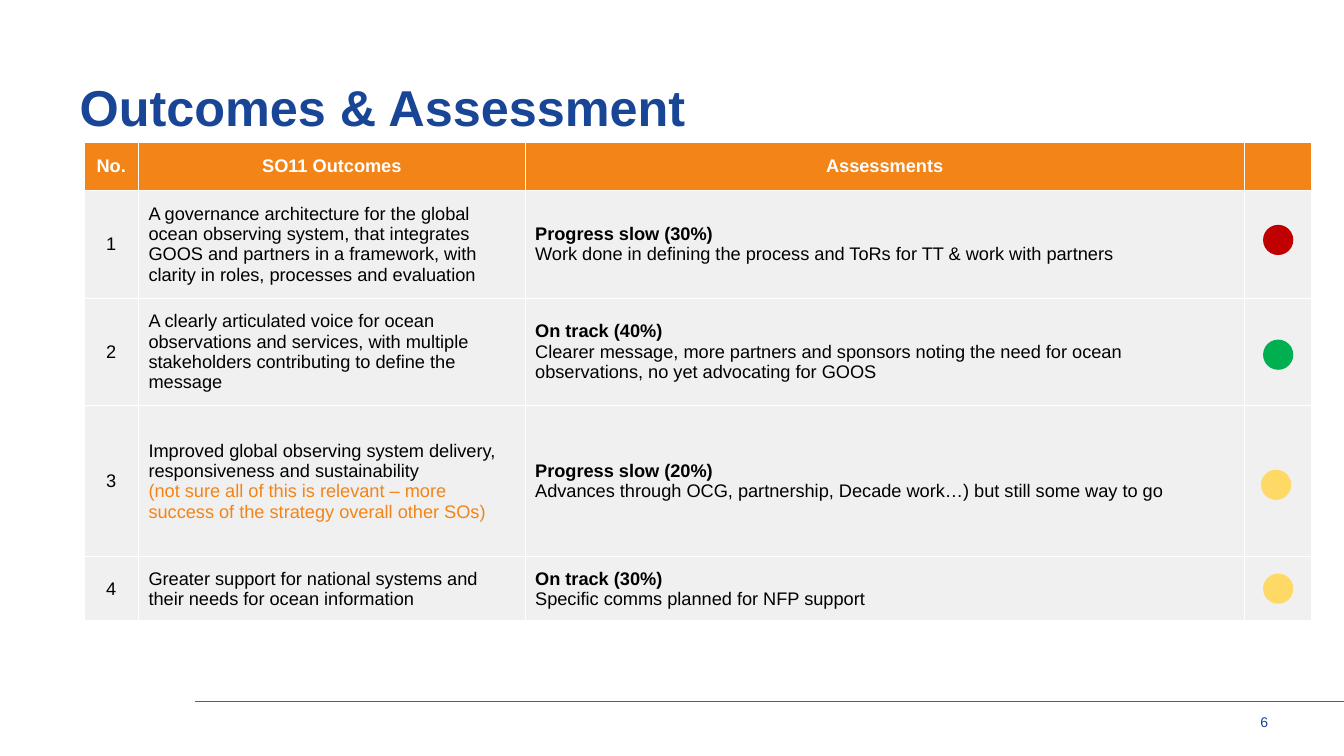
from typing import NamedTuple

from lxml import etree
from pptx import Presentation
from pptx.dml.color import RGBColor
from pptx.enum.shapes import MSO_CONNECTOR, MSO_SHAPE
from pptx.enum.text import MSO_ANCHOR, PP_ALIGN
from pptx.oxml.ns import qn
from pptx.util import Pt

CENTER, LEFT, RIGHT = PP_ALIGN.CENTER, PP_ALIGN.LEFT, PP_ALIGN.RIGHT
MIDDLE, TOP = MSO_ANCHOR.MIDDLE, MSO_ANCHOR.TOP
OVAL, STRAIGHT = MSO_SHAPE.OVAL, MSO_CONNECTOR.STRAIGHT

WHITE = RGBColor(0xFF, 0xFF, 0xFF)
BLACK = RGBColor(0, 0, 0)
BLUE = RGBColor(0x18, 0x45, 0x96)
ORANGE = RGBColor(0xF3, 0x84, 0x17)
PALE = RGBColor(0xF0, 0xF0, 0xF0)
GREY = RGBColor(0x5C, 0x5C, 0x5C)
RED = RGBColor(0xC0, 0, 0)
GREEN = RGBColor(0, 0xB0, 0x50)
YELLOW = RGBColor(0xFF, 0xD9, 0x66)

FONT = "Arial"
TABLE_LEFT, TABLE_TOP = 60, 101.5
COL_WIDTHS = (38.9, 276.2, 513.5, 48.2)
HEADER_HEIGHT = 34.5
DOT_SIZE = 21.6
HEADINGS = ("No.", "SO11 Outcomes", "Assessments", "")


class Outcome(NamedTuple):
    text: str
    status: str
    detail: str
    height: float
    dot_color: RGBColor
    dot_left: float
    dot_top: float
    remark: str = ""


class Line(NamedTuple):
    text: str
    color: RGBColor = BLACK
    bold: bool = False


OUTCOMES = (
    Outcome("A governance architecture for the global ocean observing system, that "
            "integrates GOOS and partners in a framework, with clarity in roles, "
            "processes and evaluation",
            "Progress slow (30%)",
            "Work done in defining the process and ToRs for TT & work with partners",
            76.7, RED, 902.2, 160.6),
    Outcome("A clearly articulated voice for ocean observations and services, with "
            "multiple stakeholders contributing to define the message",
            "On track (40%)",
            "Clearer message, more partners and sponsors noting the need for ocean "
            "observations, no yet advocating for GOOS",
            76.7, GREEN, 902.2, 242.6),
    Outcome("Improved global observing system delivery, responsiveness and sustainability",
            "Progress slow (20%)",
            "Advances through OCG, partnership, Decade work…) but still some way to go",
            108, YELLOW, 900.7, 335.5,
            "(not sure all of this is relevant – more success of the strategy overall "
            "other SOs)"),
    Outcome("Greater support for national systems and their needs for ocean information",
            "On track (30%)", "Specific comms planned for NFP support",
            42.5, YELLOW, 902.2, 409.7),
)


def add_text(s, text: str, box: tuple, size: float, align, spacing: float,
             bold: bool = False, anchor=TOP) -> None:
    tf = s.shapes.add_textbox(*map(Pt, box)).text_frame
    tf.word_wrap = True
    tf.margin_left = tf.margin_right = tf.margin_top = tf.margin_bottom = 0
    tf.vertical_anchor = anchor
    tf.text = text
    p = tf.paragraphs[0]
    p.alignment, p.line_spacing = align, spacing
    font = p.runs[0].font
    font.name, font.size, font.bold = FONT, Pt(size), bold
    font.color.rgb = BLUE


def set_borders(cell) -> None:
    """Give the cell thin white edges, placed ahead of its fill."""
    tc_pr = cell._tc.get_or_add_tcPr()
    for i, edge in enumerate(("a:lnL", "a:lnR", "a:lnT", "a:lnB")):
        ln = etree.Element(qn(edge), w=str(Pt(0.75)))
        fill = etree.SubElement(ln, qn("a:solidFill"))
        etree.SubElement(fill, qn("a:srgbClr"), val=str(WHITE))
        tc_pr.insert(i, ln)


def fill_cell(cell, lines: list[Line], fill: RGBColor, align) -> None:
    cell.fill.solid()
    cell.fill.fore_color.rgb = fill
    set_borders(cell)
    cell.vertical_anchor = MIDDLE
    cell.margin_left = cell.margin_right = Pt(7.2)
    cell.margin_top = cell.margin_bottom = Pt(7.2)
    tf = cell.text_frame
    tf.text = "\n".join(line.text for line in lines)
    for p, line in zip(tf.paragraphs, lines):
        p.alignment = align
        p.font.size = Pt(13)
        for r in p.runs:
            r.font.name, r.font.size, r.font.bold = FONT, Pt(13), line.bold
            r.font.color.rgb = line.color


def add_outcome_table(s) -> None:
    heights = (HEADER_HEIGHT, *(o.height for o in OUTCOMES))
    table = s.shapes.add_table(
        len(heights), len(COL_WIDTHS), Pt(TABLE_LEFT), Pt(TABLE_TOP),
        Pt(sum(COL_WIDTHS)), Pt(sum(heights))).table
    for col, width in zip(table.columns, COL_WIDTHS):
        col.width = Pt(width)
    for row, height in zip(table.rows, heights):
        row.height = Pt(height)
    for c, heading in enumerate(HEADINGS):
        fill_cell(table.cell(0, c), [Line(heading, WHITE, True)], ORANGE, CENTER)
    for n, o in enumerate(OUTCOMES, start=1):
        outcome = [Line(o.text)]
        if o.remark:
            outcome.append(Line(o.remark, ORANGE))
        contents = ([Line(str(n))], outcome,
                    [Line(o.status, bold=True), Line(o.detail)], [Line("")])
        for c, lines in enumerate(contents):
            fill_cell(table.cell(n, c), lines, PALE, LEFT if c else CENTER)


def add_status_dot(s, o: Outcome) -> None:
    sp = s.shapes.add_shape(OVAL, Pt(o.dot_left), Pt(o.dot_top),
                            Pt(DOT_SIZE), Pt(DOT_SIZE))
    sp.shadow.inherit = False
    sp.fill.solid()
    sp.fill.fore_color.rgb = o.dot_color
    sp.line.fill.background()


def add_footer_rule(s) -> None:
    rule = s.shapes.add_connector(STRAIGHT, Pt(139), Pt(501), Pt(960), Pt(501))
    rule.line.color.rgb = GREY
    rule.line.width = Pt(0.75)
    etree.SubElement(rule._element.spPr, qn("a:effectLst"))


def main() -> None:
    prs = Presentation()
    prs.slide_width, prs.slide_height = Pt(960), Pt(540)
    s = prs.slides.add_slide(prs.slide_layouts[6])
    add_footer_rule(s)
    add_text(s, "Outcomes & Assessment", (56.9, 56.9, 846.7, 45.4), 36, LEFT, 0.85,
             bold=True, anchor=MIDDLE)
    add_text(s, "6", (885.6, 511.2, 20.2, 15.1), 10, RIGHT, 0.9)
    add_outcome_table(s)
    for o in OUTCOMES:
        add_status_dot(s, o)
    prs.save("out.pptx")


if __name__ == "__main__":
    main()
